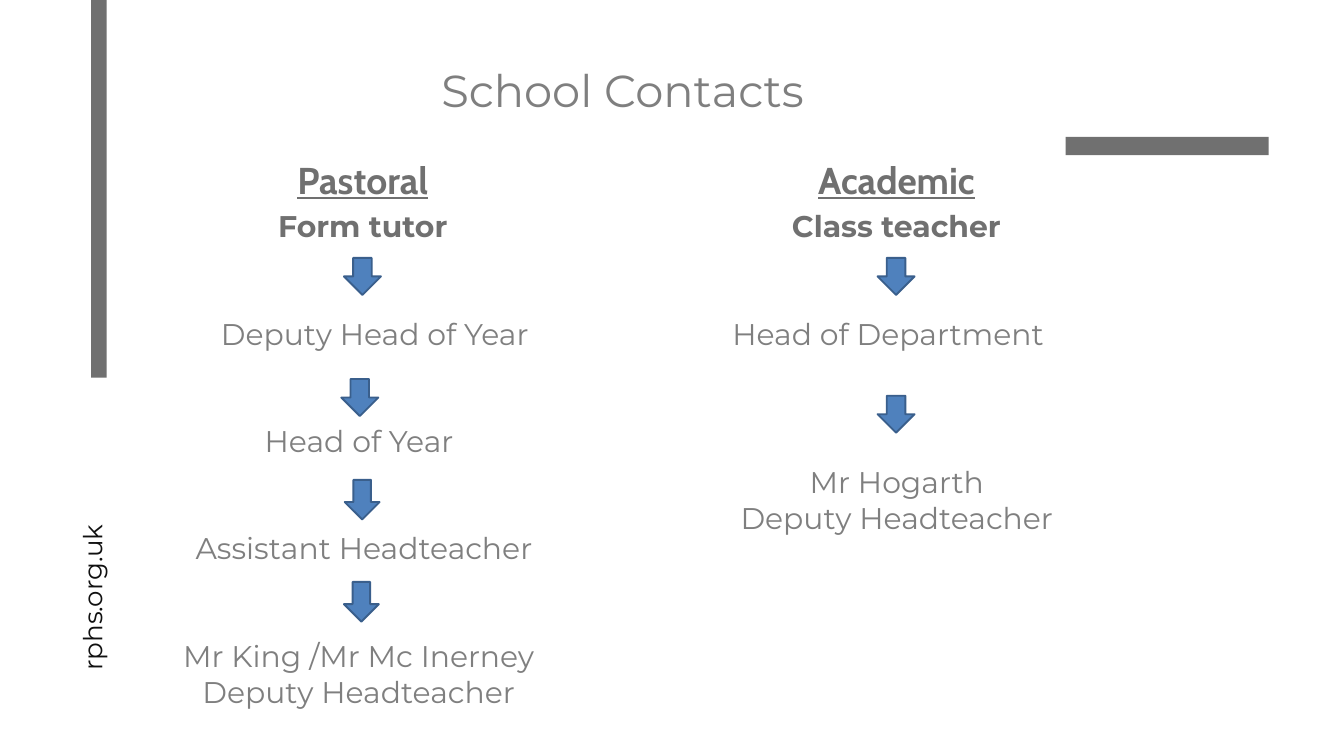
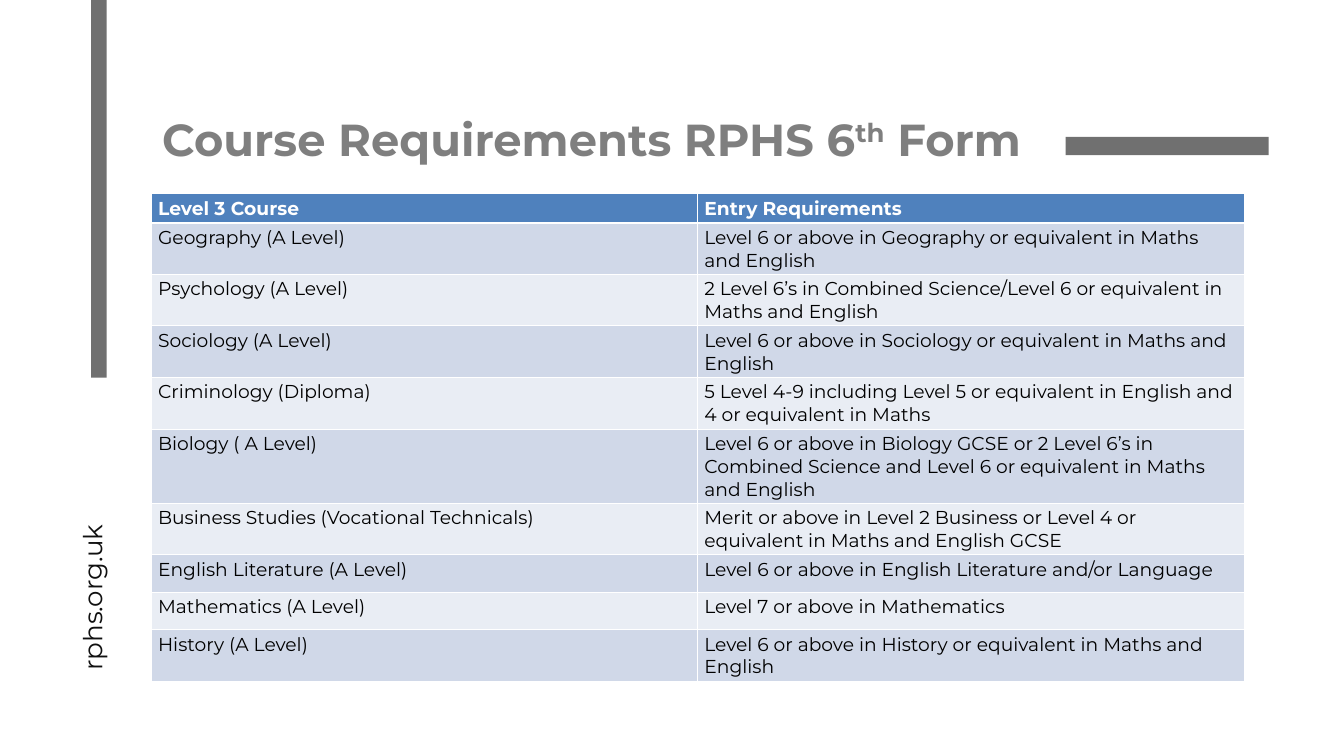
from lxml.etree import SubElement
from pptx import Presentation
from pptx.dml.color import RGBColor
from pptx.enum.shapes import MSO_SHAPE
from pptx.enum.text import MSO_ANCHOR, MSO_AUTO_SIZE, PP_ALIGN
from pptx.oxml import parse_xml
from pptx.oxml.ns import nsdecls, qn
from pptx.util import Cm, Pt

WHITE = RGBColor(0xFF, 0xFF, 0xFF)
BLACK = RGBColor(0x00, 0x00, 0x00)
INK = RGBColor(0x10, 0x10, 0x10)
BAND_GREY = RGBColor(0x70, 0x70, 0x70)
TEXT_GREY = RGBColor(0x7F, 0x7F, 0x7F)
BLUE = RGBColor(0x4F, 0x81, 0xBD)
BLUE_EDGE = RGBColor(0x3A, 0x5F, 0x8C)
ROW_DARK = RGBColor(0xD0, 0xD8, 0xE8)
ROW_LIGHT = RGBColor(0xE9, 0xED, 0xF4)

BODY_FONT = "Montserrat"
HEADING_FONT = "Cabin"

BANDS = [(3.45, 0, 0.58, 14.28), (40.28, 5.18, 7.67, 0.69)]

# Heading, first contact, left edge
COLUMNS = [("Pastoral", "Form tutor", 8.1), ("Academic", "Class teacher", 28.27)]

# Lines, alignment, left, top, width, height
CONTACTS = [
    (["Deputy Head of Year"], PP_ALIGN.LEFT, 8.1, 11.81, 12.9, 1.63),
    (["Head of Year"], PP_ALIGN.CENTER, 9.5, 15.85, 8.15, 1.63),
    (["Assistant Headteacher"], PP_ALIGN.CENTER, 6.73, 19.91, 14.07, 1.63),
    (["Mr King /Mr Mc Inerney", "Deputy Headteacher"],
     PP_ALIGN.CENTER, 6.32, 23.98, 14.48, 3),
    (["Head of Department"], PP_ALIGN.LEFT, 27.43, 11.81, 12.83, 1.63),
    (["Mr Hogarth", "Deputy Headteacher"],
     PP_ALIGN.CENTER, 27.41, 17.4, 12.98, 3),
]

ARROWS = [
    (13, 9.75, 1.4, 1.4),
    (12.9, 14.33, 1.4, 1.4),
    (13.03, 18.14, 1.32, 1.5),
    (13, 22, 1.32, 1.5),
    (33.17, 9.75, 1.4, 1.4),
    (33.17, 14.96, 1.4, 1.4),
]

# Course, entry requirement, row height
COURSES = [
    ("Level 3 Course", "Entry Requirements", 0.64),
    ("Geography (A Level)",
     "Level 6 or above in Geography or equivalent in Maths and English", 1.65),
    ("Psychology (A Level)",
     "2 Level 6’s in Combined Science/Level 6 or equivalent in Maths and English", 1.65),
    ("Sociology (A Level)",
     "Level 6 or above in Sociology or equivalent in Maths and English", 1.65),
    ("Criminology (Diploma)",
     "5 Level 4-9 including Level 5 or equivalent in English and 4 or equivalent in Maths", 1.65),
    ("Biology ( A Level)",
     "Level 6 or above in Biology GCSE or 2 Level 6’s in Combined Science and "
     "Level 6 or equivalent in Maths and English", 1.65),
    ("Business Studies (Vocational Technicals)",
     "Merit or above in Level 2 Business or Level 4 or equivalent in Maths and English GCSE", 1.65),
    ("English Literature (A Level)",
     "Level 6 or above in English Literature and/or Language", 1.42),
    ("Mathematics (A Level)", "Level 7 or above in Mathematics", 1.42),
    ("History (A Level)",
     "Level 6 or above in History or equivalent in Maths and English", 1.65),
]


def box(left, top, width, height):
    return Cm(left), Cm(top), Cm(width), Cm(height)


def move(placeholder, left, top, width, height):
    placeholder.left, placeholder.top, placeholder.width, placeholder.height = box(
        left, top, width, height)


def add_run(paragraph, text, size, color, bold=False, font_name=BODY_FONT):
    run = paragraph.add_run()
    run.text = text
    font = run.font
    font.name, font.size, font.bold = font_name, Pt(size), bold
    font.color.rgb = color
    return run


def add_preset(slide, preset, bounds, fill):
    shape = slide.shapes.add_shape(preset, *box(*bounds))
    shape.shadow.inherit = False
    shape.fill.solid()
    shape.fill.fore_color.rgb = fill
    return shape


def add_frame(slide):
    """Add the grey bands and the upright web address found on each slide."""
    for bounds in BANDS:
        add_preset(slide, MSO_SHAPE.RECTANGLE, bounds, BAND_GREY).line.fill.background()
    address = slide.shapes.add_textbox(*box(-2.16, 19.15, 11.05, 1.35))
    address.rotation = 270
    frame = address.text_frame
    frame.word_wrap = True
    frame.margin_left = frame.margin_top = frame.margin_right = frame.margin_bottom = 0
    frame.paragraphs[0].line_spacing = Pt(39.2)
    add_run(frame.paragraphs[0], "rphs.org.uk", 28, INK)


def start_title(slide, bounds, anchor, align):
    """Place the title and return its empty paragraph."""
    move(slide.shapes.title, *bounds)
    frame = slide.shapes.title.text_frame
    frame.auto_size = MSO_AUTO_SIZE.NONE
    frame.vertical_anchor = anchor
    frame.paragraphs[0].alignment = align
    return frame.paragraphs[0]


def fill_column_heading(placeholder, heading, first_contact, left):
    move(placeholder, left, 5.82, 11.23, 1.5)
    frame = placeholder.text_frame
    frame.auto_size = MSO_AUTO_SIZE.NONE
    paragraphs = [frame.paragraphs[0], frame.add_paragraph()]
    for paragraph, space in zip(paragraphs, (0, 6.4)):
        properties = paragraph._p.get_or_add_pPr()
        properties.set("marL", "0")
        properties.set("indent", "0")
        SubElement(properties, qn("a:buNone"))
        paragraph.alignment = PP_ALIGN.CENTER
        paragraph.space_before = Pt(space)
    run = add_run(paragraphs[0], heading, 40, BAND_GREY, True, HEADING_FONT)
    run.font.underline = True
    add_run(paragraphs[1], first_contact, 32, BAND_GREY, True)


def add_contact(slide, lines, align, *bounds):
    frame = slide.shapes.add_textbox(*box(*bounds)).text_frame
    frame.word_wrap = True
    for index, line in enumerate(lines):
        paragraph = frame.add_paragraph() if index else frame.paragraphs[0]
        paragraph.alignment = align
        add_run(paragraph, line, 32, TEXT_GREY)


def add_arrow(slide, bounds):
    arrow = add_preset(slide, MSO_SHAPE.DOWN_ARROW, bounds, BLUE)
    arrow.line.color.rgb = BLUE_EDGE
    arrow.line.width = Pt(2)


def set_borders(cell, top, bottom):
    """Draw white cell borders; top and bottom are widths in points."""
    properties = cell._tc.get_or_add_tcPr()
    widths = {"lnL": 1, "lnR": 1, "lnT": top, "lnB": bottom}
    for index, (side, width) in enumerate(widths.items()):
        properties.insert(index, parse_xml(
            f'<a:{side} {nsdecls("a")} w="{Pt(width)}"><a:solidFill>'
            f'<a:srgbClr val="{WHITE}"/></a:solidFill></a:{side}>'))


def add_course_table(slide):
    table = slide.shapes.add_table(len(COURSES), 2, *box(5.72, 7.32, 41.3, 15.03)).table
    for row, (course, requirement, height) in enumerate(COURSES):
        table.rows[row].height = Cm(height)
        is_header = row == 0
        fill = BLUE if is_header else (ROW_LIGHT, ROW_DARK)[row % 2]
        for column, text in enumerate((course, requirement)):
            cell = table.cell(row, column)
            cell.fill.solid()
            cell.fill.fore_color.rgb = fill
            set_borders(cell, 3 if row == 1 else 1, 3 if is_header else 1)
            add_run(cell.text_frame.paragraphs[0], text, 20,
                    WHITE if is_header else BLACK, is_header)


def build_contacts(presentation):
    slide = presentation.slides.add_slide(presentation.slide_layouts[3])
    add_frame(slide)
    title = start_title(slide, (16.43, 2.26, 15.06, 2.31), MSO_ANCHOR.TOP, PP_ALIGN.LEFT)
    add_run(title, "School Contacts", 48, TEXT_GREY)
    for index, column in enumerate(COLUMNS, start=1):
        fill_column_heading(slide.placeholders[index], *column)
    for contact in CONTACTS:
        add_contact(slide, *contact)
    for bounds in ARROWS:
        add_arrow(slide, bounds)


def build_courses(presentation):
    slide = presentation.slides.add_slide(presentation.slide_layouts[5])
    add_frame(slide)
    add_course_table(slide)
    title = start_title(slide, (5.72, 4.24, 33.27, 1.98), MSO_ANCHOR.MIDDLE, PP_ALIGN.CENTER)
    add_run(title, "Course Requirements RPHS 6", 48, TEXT_GREY, True)
    ordinal = add_run(title, "th", 48, TEXT_GREY, True)
    ordinal._r.get_or_add_rPr().set("baseline", "30000")
    add_run(title, " Form", 48, TEXT_GREY, True)


def main():
    presentation = Presentation()
    presentation.slide_width = Cm(50.8)
    presentation.slide_height = Cm(28.58)
    build_contacts(presentation)
    build_courses(presentation)
    presentation.save("out.pptx")


if __name__ == "__main__":
    main()
